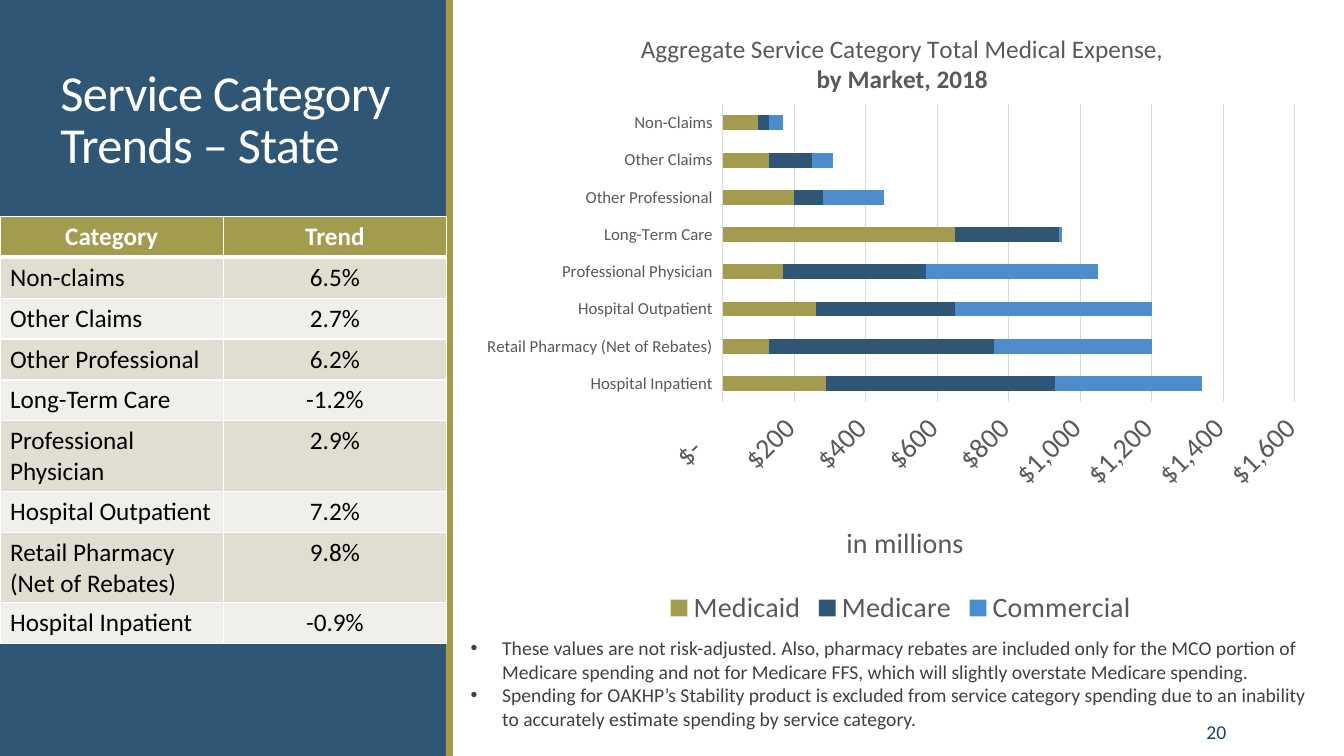
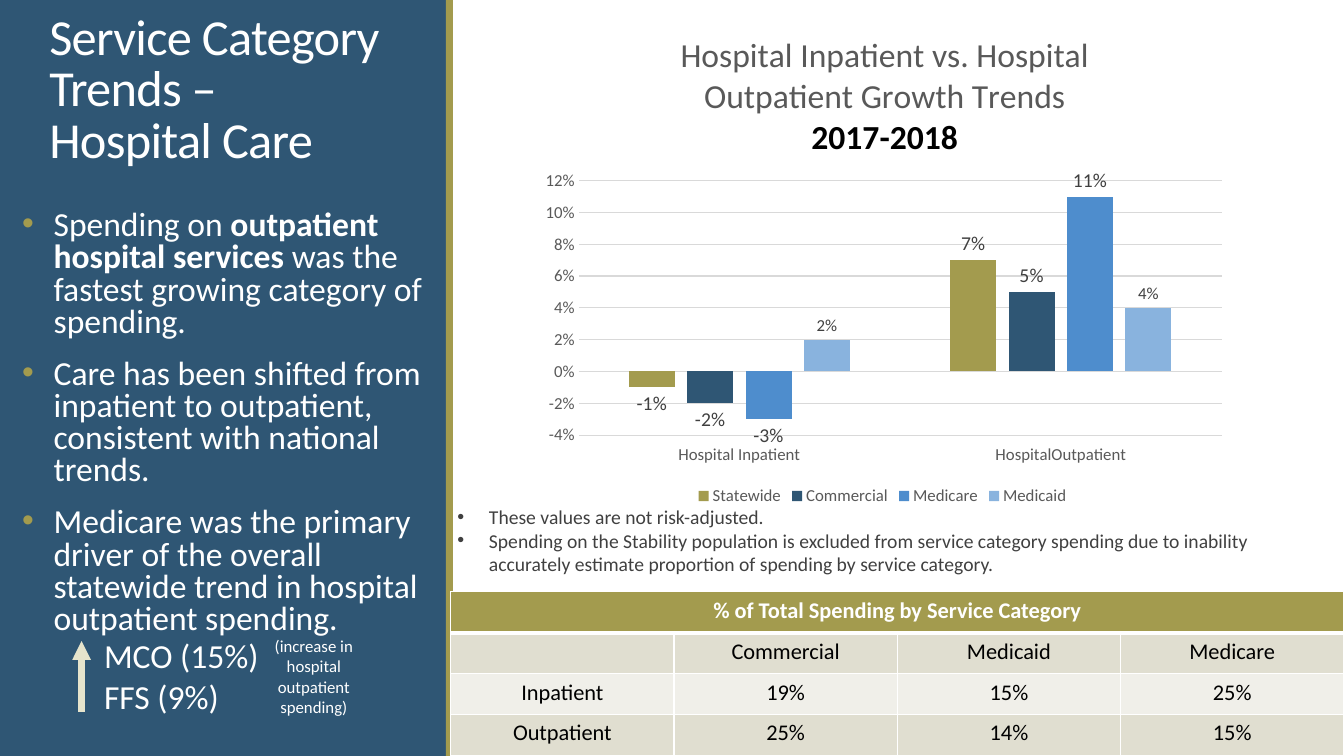
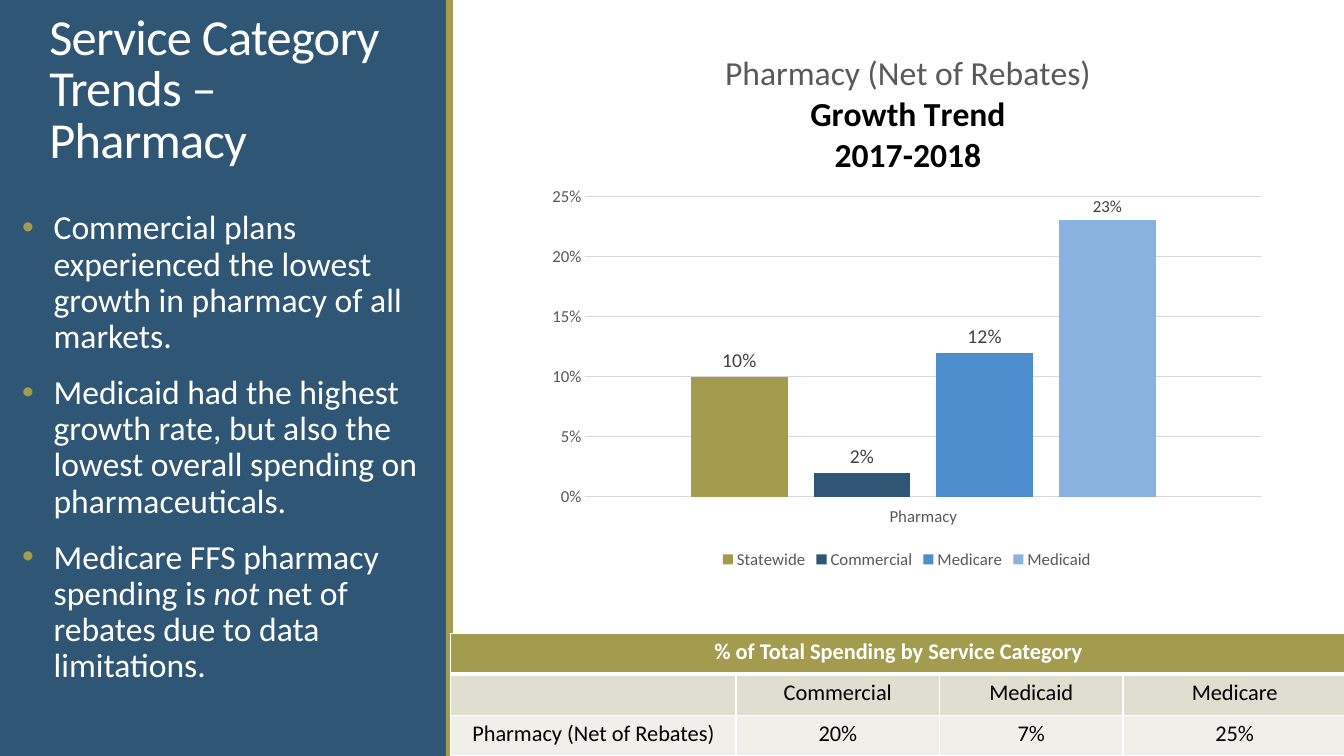
from pptx import Presentation
from pptx.chart.data import CategoryChartData as Data
from pptx.dml.color import RGBColor as Rgb
from pptx.enum.chart import XL_CHART_TYPE as Kind, XL_LABEL_POSITION as Spot
from pptx.enum.chart import XL_LEGEND_POSITION as Side, XL_TICK_LABEL_POSITION as Label
from pptx.enum.chart import XL_TICK_MARK as Tick
from pptx.enum.shapes import MSO_CONNECTOR as Wire, MSO_SHAPE as Form
from pptx.enum.text import MSO_ANCHOR as Anchor, MSO_AUTO_SIZE as Auto, PP_ALIGN as Align
from pptx.oxml.ns import qn
from pptx.util import Pt
from lxml.etree import SubElement as Sub

INK = {
    "navy": "2F5674", "olive": "A39B4E", "blue": "4E8DCD", "sky": "89B3DE",
    "white": "FFFFFF", "black": "000000", "gray": "595959", "dark": "404040",
    "rule": "D9D9D9", "page": "1D4268", "cream": "E6E4CC",
    "odd": "E0DED0", "even": "F0EFE9",
}
FACE = "Calibri"
WIDE, HIGH = 960, 540
PANEL = 319
ROW = 29.2
HANG = 22.5
MONEY = r'_("$"* #,##0_);_("$"* \(#,##0\);_("$"* "-"??_);_(@_)'
SHARE = "% of Total Spending by Service Category"
TITLE = {"size": 36, "tint": "white"}
LIST = {"size": 24, "tint": "white"}
NOTE = {"size": 14, "tint": "dark"}


def tone(name):
    return Rgb.from_string(INK[name])


def put(item, **vals):
    for key, val in vals.items():
        setattr(item, key, val)


def style(font, size, tint, **more):
    put(font, name=FACE, size=Pt(size), **more)
    font.color.rgb = tone(tint)


def move(shape, box):
    for key, val in zip(("left", "top", "width", "height"), box):
        setattr(shape, key, Pt(val))


def paint(fill, name):
    fill.solid()
    fill.fore_color.rgb = tone(name)


def write(frame, paras, look, **form):
    """Fill a text frame; a paragraph is a string or a list of (text, format) runs."""
    for n, runs in enumerate(paras):
        para = frame.paragraphs[0] if n == 0 else frame.add_paragraph()
        put(para, **form)
        for text, more in [(runs, {})] if isinstance(runs, str) else runs:
            run = para.add_run()
            run.text = text
            style(run.font, **{**look, **more})
    return frame.paragraphs


def indent(para, left, hang, dot=None):
    """Set the indent, and a bullet in the colour dot, or none."""
    props = para._p.get_or_add_pPr()
    props.set("marL", str(Pt(left)))
    props.set("indent", str(Pt(-hang)))
    if dot:
        Sub(Sub(props, qn("a:buClr")), qn("a:srgbClr"), val=INK[dot])
        Sub(props, qn("a:buFont"), typeface="Arial")
        Sub(props, qn("a:buChar"), char="•")
    else:
        Sub(props, qn("a:buNone"))


def label(slide, box, paras, look, anchor=Anchor.TOP, **form):
    shape = slide.shapes.add_textbox(*map(Pt, box))
    put(shape.text_frame, word_wrap=True, vertical_anchor=anchor)
    return write(shape.text_frame, paras, look, **form)


def notes(paras):
    for para in paras:
        indent(para, HANG, HANG, "dark")


def bands(slide, layout):
    """Draw the side panel and its edge, and hand them to the layout."""
    parts = ((0, PANEL, "navy"), (PANEL - 0.5, 5, "olive"))
    for n, (left, wide, name) in enumerate(parts):
        bar = slide.shapes.add_shape(Form.RECTANGLE, Pt(left), 0, Pt(wide), Pt(HIGH))
        bar.shadow.inherit = False
        paint(bar.fill, name)
        bar.line.fill.background()
        bar.element.xpath(".//p:cNvPr")[0].set("id", str(20 + n))
        layout.shapes.element.insert(2 + n, bar.element)


def start(deck, title, box, page):
    """Add a slide with its title and page number."""
    slide = deck.slides.add_slide(deck.slide_layouts[1])
    head = slide.shapes.title
    move(head, box)
    put(head.text_frame, vertical_anchor=Anchor.TOP, auto_size=Auto.NONE, word_wrap=True)
    for para in write(head.text_frame, [title], TITLE,
                      line_spacing=0.85, alignment=Align.LEFT):
        para.runs[0]._r.get_or_add_rPr().set("spc", "-50")
    label(slide, (780, 508.3, 103, 29), [page], {"size": 14, "tint": "page"},
          Anchor.MIDDLE, alignment=Align.RIGHT)
    return slide


def body(slide, box, paras, look, **form):
    shape = slide.placeholders[1]
    move(shape, box)
    put(shape.text_frame, vertical_anchor=Anchor.TOP, auto_size=Auto.NONE, word_wrap=True)
    return write(shape.text_frame, paras, look, **form)


def points(slide, paras, space):
    """Place the main list on the side panel."""
    items = body(slide, (8.6, 146.9, 311, 390), paras, LIST, line_spacing=space,
                 space_before=Pt(12), space_after=Pt(2))
    for para in items:
        indent(para, HANG, HANG, "olive")


def grid(slide, left, top, cols, rows, size, first=Align.CENTER):
    """Add a table; a single text in the first row spans all columns."""
    many = len(cols)
    shape = slide.shapes.add_table(len(rows), many, Pt(left), Pt(top),
                                   Pt(sum(cols)), Pt(ROW * len(rows)))
    table = shape.table
    for col, wide in zip(table.columns, cols):
        col.width = Pt(wide)
    for row in table.rows:
        row.height = Pt(ROW)
    if len(rows[0]) == 1:
        table.cell(0, 0).merge(table.cell(0, many - 1))
    for n, (cell, node) in enumerate(zip(table.iter_cells(), shape.element.iter(qn("a:tc")))):
        r, c = divmod(n, many)
        props = node.get_or_add_tcPr()
        for side in "LRTB":
            thick = 3 if (r, side) in ((0, "B"), (1, "T")) else 1
            line = Sub(props, qn("a:ln" + side), w=str(Pt(thick)))
            Sub(Sub(line, qn("a:solidFill")), qn("a:srgbClr"), val=INK["white"])
        paint(cell.fill, "olive" if r == 0 else "odd" if r % 2 else "even")
        if c < len(rows[r]) and rows[r][c]:
            look = {"size": size, "tint": "black" if r else "white", "bold": r == 0}
            write(cell.text_frame, [rows[r][c]], look,
                  alignment=first if r and c == 0 else Align.CENTER)


def place(host, **spots):
    """Give a chart part a fixed place, in fractions of the chart."""
    box = host.find(qn("c:layout"))
    if box is None:
        box = host.makeelement(qn("c:layout"))
        host.insert(len(host.findall(qn("c:tx"))), box)
    hand = Sub(box, qn("c:manualLayout"))
    if "w" in spots:
        Sub(hand, qn("c:layoutTarget"), val="inner")
    for key in "xy":
        Sub(hand, qn(f"c:{key}Mode"), val="edge")
    for key, val in spots.items():
        Sub(hand, qn("c:" + key), val=str(val))


def graph(slide, box, kind, cats, series, title, spot, plot, scale, form, big, gap, lap):
    """Add a bar chart; series holds (name, values, colour), title (text, format)."""
    data = Data(number_format=form)
    data.categories = cats
    for name, vals, _ in series:
        data.add_series(name, vals)
    chart = slide.shapes.add_chart(kind, *map(Pt, box), data).chart
    style(chart.font, 12, "gray")
    chart.has_title = chart.has_legend = True
    head = chart.chart_title
    write(head.text_frame, [[line] for line in title], {"size": 24, "tint": "gray", "bold": False},
          alignment=Align.CENTER)
    place(head._element, **dict(zip("xy", spot)))
    place(chart._chartSpace.chart.plotArea, **dict(zip("xywh", plot)))
    put(chart.legend, position=Side.BOTTOM, include_in_layout=False)
    style(chart.legend.font, big, "gray")

    low, high, step = scale
    cat, val = chart.category_axis, chart.value_axis
    put(val, minimum_scale=low, maximum_scale=high, major_unit=step, has_major_gridlines=True)
    put(val.tick_labels, number_format=form, number_format_is_linked=False)
    cat.tick_label_position = Label.LOW
    for axis, size in ((cat, 12), (val, big)):
        put(axis, major_tick_mark=Tick.NONE, minor_tick_mark=Tick.NONE)
        style(axis.tick_labels.font, size, "gray")
    val.format.line.fill.background()
    for line in (cat.format.line, val.major_gridlines.format.line):
        line.width = Pt(0.75)
        line.color.rgb = tone("rule")

    bars = chart.plots[0]
    put(bars, gap_width=gap, overlap=lap, vary_by_categories=False)
    for item, (_, _, name) in zip(bars.series, series):
        paint(item.format.fill, name)
        item.invert_if_negative = False
    return chart


def trend(slide, box, cats, rows, title, spot, plot, scale):
    """Add a column chart of growth by market, with value labels."""
    names = ("Statewide", "Commercial", "Medicare", "Medicaid")
    tints = ("olive", "navy", "blue", "sky")
    chart = graph(slide, box, Kind.COLUMN_CLUSTERED, cats, list(zip(names, rows, tints)),
                  title, spot, plot, scale, "0%", 12, 219, -27)
    for item, size in zip(chart.plots[0].series, (14, 14, 14, 12)):
        tags = item.data_labels
        put(tags, show_value=True, position=Spot.OUTSIDE_END,
            number_format="0%", number_format_is_linked=False)
        style(tags.font, size, "dark")


def market(slide, box):
    """Add the stacked chart of spending by category."""
    cats = ("Hospital Inpatient", "Retail Pharmacy (Net of Rebates)", "Hospital Outpatient",
            "Professional Physician", "Long-Term Care", "Other Professional",
            "Other Claims", "Non-Claims")
    series = (("Medicaid", (290, 130, 260, 170, 650, 200, 130, 100), "olive"),
              ("Medicare", (640, 630, 390, 400, 290, 80, 120, 30), "navy"),
              ("Commercial", (410, 440, 550, 480, 10, 170, 60, 40), "blue"))
    title = (("Aggregate Service Category Total Medical Expense,", {"size": 18}),
             ("by Market, 2018", {"size": 18, "bold": True}))
    chart = graph(slide, box, Kind.BAR_STACKED, cats, series, title, (0.19, 0.04),
                  (0.29, 0.16, 0.675, 0.475), (0, 1600, 200), MONEY, 20, 150, 100)
    axis = chart.value_axis
    write(axis.axis_title.text_frame, ["in millions"],
          {"size": 20, "tint": "gray", "bold": False})
    place(axis.axis_title._element, x=0.43, y=0.82)
    axis._element.find(qn("c:txPr")).find(qn("a:bodyPr")).set("rot", "-2700000")


def rise(slide, left, top):
    """Add the up arrow with the two growth rates' remark beside it."""
    arrow = slide.shapes.add_connector(Wire.STRAIGHT, Pt(left), Pt(top + 50.4), Pt(left), Pt(top))
    arrow.line.width = Pt(4.5)
    arrow.line.color.rgb = tone("cream")
    Sub(arrow.line._get_or_add_ln(), qn("a:tailEnd"), type="triangle")
    Sub(arrow.element.spPr, qn("a:effectLst"))
    label(slide, (left + 123.8, top - 7.2, 84.2, 65.5),
          ["(increase in hospital outpatient spending)"],
          {"size": 12, "tint": "white"}, alignment=Align.CENTER)


def state(deck):
    slide = start(deck, "Service Category Trends – State", (36, 46.8, 252, 101.5), "20")
    bands(slide, deck.slide_layouts[1])
    market(slide, (340.6, 2.9, 605.5, 447.8))
    notes(body(slide, (329, 450.7, 617, 75), [
        "These values are not risk-adjusted. Also, pharmacy rebates are included only for the "
        "MCO portion of Medicare spending and not for Medicare FFS, which will slightly "
        "overstate Medicare spending.",
        "Spending for OAKHP’s Stability product is excluded from service category spending "
        "due to an inability to accurately estimate spending by service category.",
    ], NOTE, space_before=Pt(0), space_after=Pt(0)))
    grid(slide, 0, 154.6, (159.5, 159.5), (
        ("Category", "Trend"), ("Non-claims", "6.5%"), ("Other Claims", "2.7%"),
        ("Other Professional", "6.2%"), ("Long-Term Care", "-1.2%"),
        ("Professional Physician", "2.9%"), ("Hospital Outpatient", "7.2%"),
        ("Retail Pharmacy (Net of Rebates)", "9.8%"), ("Hospital Inpatient", "-0.9%"),
    ), 18, Align.LEFT)


def care(deck):
    slide = start(deck, "Service Category Trends – Hospital Care", (28, 6.5, 252, 180), "24")
    points(slide, [
        [("Spending on ", {}), ("outpatient hospital services ", {"bold": True}),
         ("was the fastest growing category of spending.", {})],
        "Care has been shifted from inpatient to outpatient, consistent with national trends.",
        "Medicare was the primary driver of the overall statewide trend in hospital "
        "outpatient spending.",
    ], 0.8)
    frame = slide.placeholders[1].text_frame
    for text in ("MCO (15%)", "FFS (9%)"):
        para = frame.add_paragraph()
        put(para, level=1, line_spacing=0.8, space_before=Pt(2), space_after=Pt(4))
        indent(para, 58.5, 0)
        para.text = text
        style(para.runs[0].font, **LIST)
    bold = {"bold": True, "tint": "black"}
    trend(slide, (378, 7.9, 504.7, 356.4), ("Hospital Inpatient", "HospitalOutpatient"),
          ((-0.01, 0.07), (-0.02, 0.05), (-0.03, 0.11), (0.02, 0.04)),
          (("Hospital Inpatient vs. Hospital", {}), ("Outpatient Growth Trends", {}),
           ("2017-2018", bold)),
          (0.21, 0.04), (0.07, 0.34, 0.91, 0.51), (-0.04, 0.12, 0.02))
    grid(slide, 322, 422.8, [159.5] * 4, (
        (SHARE,), ("", "Commercial", "Medicaid", "Medicare"),
        ("Inpatient", "19%", "15%", "25%"), ("Outpatient", "25%", "14%", "15%")), 16)
    notes(label(slide, (319.7, 357.1, 621.4, 58), [
        "These values are not risk-adjusted.",
        "Spending on the Stability population is excluded from service category spending due "
        "to inability accurately estimate proportion of spending by service category.",
    ], NOTE))
    rise(slide, 58.3, 457.9)


def drugs(deck):
    slide = start(deck, "Service Category Trends – Pharmacy", (28, 6.5, 252, 180), "25")
    points(slide, [
        "Commercial plans experienced the lowest growth in pharmacy of all markets.",
        "Medicaid had the highest growth rate, but also the lowest overall spending on "
        "pharmaceuticals.",
        [("Medicare FFS pharmacy spending is ", {}), ("not", {"italic": True}),
         (" net of rebates due to data limitations.", {})],
    ], 0.9)
    bold = {"bold": True, "tint": "black"}
    trend(slide, (383.8, 19.4, 527.8, 390.2), ("Pharmacy",),
          ((0.1,), (0.02,), (0.12,), (0.23,)),
          (("Pharmacy (Net of Rebates)", {}), ("Growth Trend", bold), ("2017-2018", bold)),
          (0.25, 0.04), (0.065, 0.31, 0.915, 0.55), (0, 0.25, 0.05))
    grid(slide, 322, 452.4, (203.8, 145.4, 131, 159.5), (
        (SHARE,), ("", "Commercial", "Medicaid", "Medicare"),
        ("Pharmacy (Net of Rebates)", "20%", "7%", "25%")), 16)


def main():
    deck = Presentation()
    put(deck, slide_width=Pt(WIDE), slide_height=Pt(HIGH))
    for build in (state, care, drugs):
        build(deck)
    deck.save("out.pptx")


if __name__ == "__main__":
    main()
